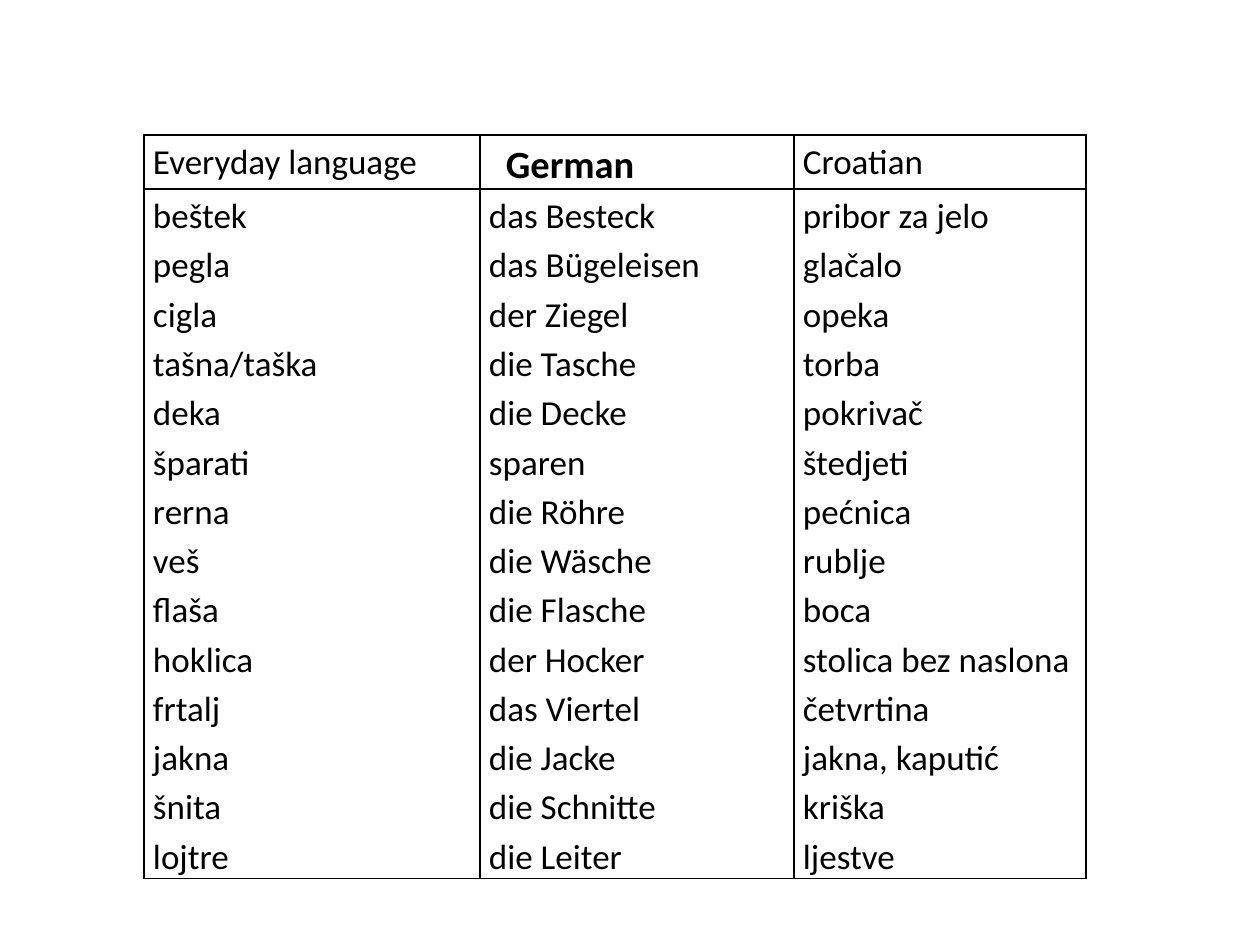
from lxml.etree import SubElement
from pptx import Presentation
from pptx.dml.color import RGBColor
from pptx.oxml.ns import qn
from pptx.util import Emu, Pt

PX = 914400 // 126  # EMU in one px

HEADINGS = ["Everyday language", "German", "Croatian"]
WORDS = [
    ("beštek", "das Besteck", "pribor za jelo"),
    ("pegla", "das Bügeleisen", "glačalo"),
    ("cigla", "der Ziegel", "opeka"),
    ("tašna/taška", "die Tasche", "torba"),
    ("deka", "die Decke", "pokrivač"),
    ("šparati", "sparen", "štedjeti"),
    ("rerna", "die Röhre", "pećnica"),
    ("veš", "die Wäsche", "rublje"),
    ("flaša", "die Flasche", "boca"),
    ("hoklica", "der Hocker", "stolica bez naslona"),
    ("frtalj", "das Viertel", "četvrtina"),
    ("jakna", "die Jacke", "jakna, kaputić"),
    ("šnita", "die Schnitte", "kriška"),
    ("lojtre", "die Leiter", "ljestve"),
]


def px(length):
    return Emu(length * PX)


def color(value):
    return RGBColor.from_string(value)


class SlideBuilder:
    font = "Calibri"
    ink = "000000"
    paper = "FFFFFF"
    inset = 9

    def __init__(self, page):
        self.page = page

    def table(self, left, top, widths, heights):
        frame = self.page.shapes.add_table(
            len(heights), len(widths), px(left), px(top),
            px(sum(widths)), px(sum(heights)))
        table = frame.table
        table.first_row = table.horz_banding = False
        for column, width in zip(table.columns, widths):
            column.width = px(width)
        for row, height in zip(table.rows, heights):
            row.height = px(height)
        return table

    def cell(self, cell, lines, size=20, bold=False, indent=0):
        margins = {"margin_left": px(self.inset + indent), "margin_right": px(self.inset),
                   "margin_top": 0, "margin_bottom": 0}
        for name, value in margins.items():
            setattr(cell, name, value)
        self.borders(cell)
        cell.fill.solid()
        cell.fill.fore_color.rgb = color(self.paper)

        cell.text = "\n".join(lines)
        for para in cell.text_frame.paragraphs:
            para.line_spacing = 1.15
            for span in para.runs:
                for name, value in {"name": self.font, "size": Pt(size), "bold": bold}.items():
                    setattr(span.font, name, value)
                span.font.color.rgb = color(self.ink)

    def borders(self, cell):
        properties = cell._tc.get_or_add_tcPr()
        for side in ("a:lnL", "a:lnR", "a:lnT", "a:lnB"):
            line = SubElement(properties, qn(side), w=str(Pt(1)))
            fill = SubElement(line, qn("a:solidFill"))
            SubElement(fill, qn("a:srgbClr"), val=self.ink)


def main():
    deck = Presentation()
    deck.slide_width, deck.slide_height = px(1260), px(945)
    builder = SlideBuilder(deck.slides.add_slide(deck.slide_layouts[6]))

    # Word table: a heading row above one tall row of word lists
    table = builder.table(144, 135, widths=[336, 314, 292], heights=[54, 689])
    emphasis = {"German": {"size": 22, "bold": True, "indent": 17}}
    for index, (heading, words) in enumerate(zip(HEADINGS, zip(*WORDS))):
        builder.cell(table.cell(0, index), [heading], **emphasis.get(heading, {}))
        builder.cell(table.cell(1, index), words)

    deck.save("out.pptx")


if __name__ == "__main__":
    main()
